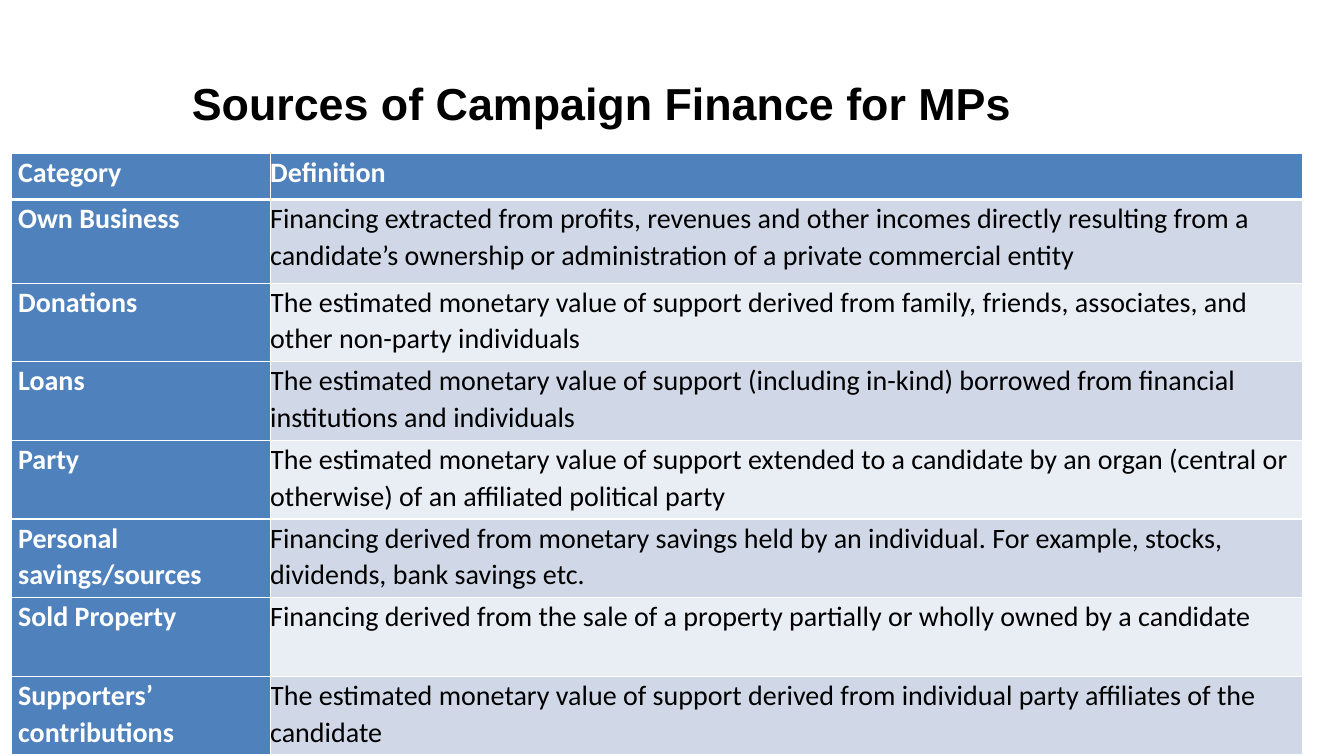
from dataclasses import dataclass

from lxml.etree import SubElement
from pptx import Presentation
from pptx.dml.color import RGBColor
from pptx.enum.text import MSO_ANCHOR, PP_ALIGN
from pptx.oxml.ns import qn
from pptx.util import Inches, Pt

TITLE = "Sources of Campaign Finance for MPs"
HEADINGS = ("Category", "Definition")
SOURCES = [
    ("Own Business", "Financing extracted from profits, revenues and other incomes directly resulting from a candidate’s ownership or administration of a private commercial entity"),
    ("Donations", "The estimated monetary value of support derived from family, friends, associates, and other non-party individuals"),
    ("Loans", "The estimated monetary value of support (including in-kind) borrowed from financial institutions and individuals"),
    ("Party", "The estimated monetary value of support extended to a candidate by an organ (central or otherwise) of an affiliated political party"),
    ("Personal savings/sources", "Financing derived from monetary savings held by an individual. For example, stocks, dividends, bank savings etc."),
    ("Sold Property", "Financing derived from the sale of a property partially or wholly owned by a candidate"),
    ("Supporters’ contributions", "The estimated monetary value of support derived from individual party affiliates of the candidate"),
]


@dataclass(frozen=True)
class Theme:
    accent: str = "4F81BD"
    bands: tuple = ("D0D8E8", "E9EDF4")
    light: str = "FFFFFF"
    dark: str = "000000"
    title_font: str = "Arial"
    body_font: str = "Calibri"
    title_size: int = 32
    body_size: int = 20
    rule: int = 1
    header_rule: int = 3


THEME = Theme()
SLIDE_SIZE = (13.33, 7.5)
TITLE_BOX = (0.22, 0.6, 11.5, 0.84)
TABLE_ORIGIN = (0.11, 1.52)
COLUMNS = (2.57, 10.24)
ROWS = [0.46, 0.83] + [0.78] * (len(SOURCES) - 1)
SIDE_INSETS = (0.07, 0)


def write(frame, text, *, font, size, color, bold=False, align=PP_ALIGN.LEFT,
          spacing=1.0, after=0):
    paragraph = frame.paragraphs[0]
    paragraph.alignment = align
    paragraph.line_spacing = spacing
    paragraph.space_after = Pt(after)
    run = paragraph.add_run()
    run.text = text
    run.font.name = font
    run.font.size = Pt(size)
    run.font.bold = bold
    run.font.color.rgb = RGBColor.from_string(color)


def fill_cell(cell, color):
    cell.fill.solid()
    cell.fill.fore_color.rgb = RGBColor.from_string(color)


def rule_cell(cell, **widths):
    properties = cell._tc.get_or_add_tcPr()
    for position, side in enumerate("LRTB"):
        width = widths.get(side, THEME.rule)
        border = SubElement(properties, qn(f"a:ln{side}"), w=str(Pt(width)))
        solid = SubElement(border, qn("a:solidFill"))
        SubElement(solid, qn("a:srgbClr"), val=THEME.light)
        properties.insert(position, border)


def add_title(slide):
    title = slide.shapes.title
    title.left, title.top, title.width, title.height = map(Inches, TITLE_BOX)
    title.text_frame.vertical_anchor = MSO_ANCHOR.MIDDLE
    title.text_frame.word_wrap = True
    write(title.text_frame, TITLE, font=THEME.title_font, size=THEME.title_size,
          color=THEME.dark, bold=True, align=PP_ALIGN.CENTER)


def add_sources(slide):
    box = map(Inches, (*TABLE_ORIGIN, sum(COLUMNS), sum(ROWS)))
    table = slide.shapes.add_table(len(ROWS), len(COLUMNS), *box).table
    table.first_col = True
    for column, width in zip(table.columns, COLUMNS):
        column.width = Inches(width)
    for row, height in zip(table.rows, ROWS):
        row.height = Inches(height)

    for r, entry in enumerate([HEADINGS, *SOURCES]):
        for c, text in enumerate(entry):
            cell = table.cell(r, c)
            label = r == 0 or c == 0
            cell.margin_left = cell.margin_right = Inches(SIDE_INSETS[c])
            cell.margin_top = cell.margin_bottom = 0
            cell.vertical_anchor = MSO_ANCHOR.TOP
            fill_cell(cell, THEME.accent if label else THEME.bands[(r - 1) % 2])
            rule_cell(cell, T=THEME.header_rule if r == 1 else THEME.rule,
                      B=THEME.header_rule if r == 0 else THEME.rule)
            write(cell.text_frame, text, font=THEME.body_font,
                  size=THEME.body_size, bold=label,
                  color=THEME.light if label else THEME.dark,
                  spacing=1.07, after=8)


def main():
    deck = Presentation()
    deck.slide_width, deck.slide_height = map(Inches, SLIDE_SIZE)
    slide = deck.slides.add_slide(deck.slide_layouts[5])
    add_title(slide)
    add_sources(slide)
    deck.save("out.pptx")


if __name__ == "__main__":
    main()
